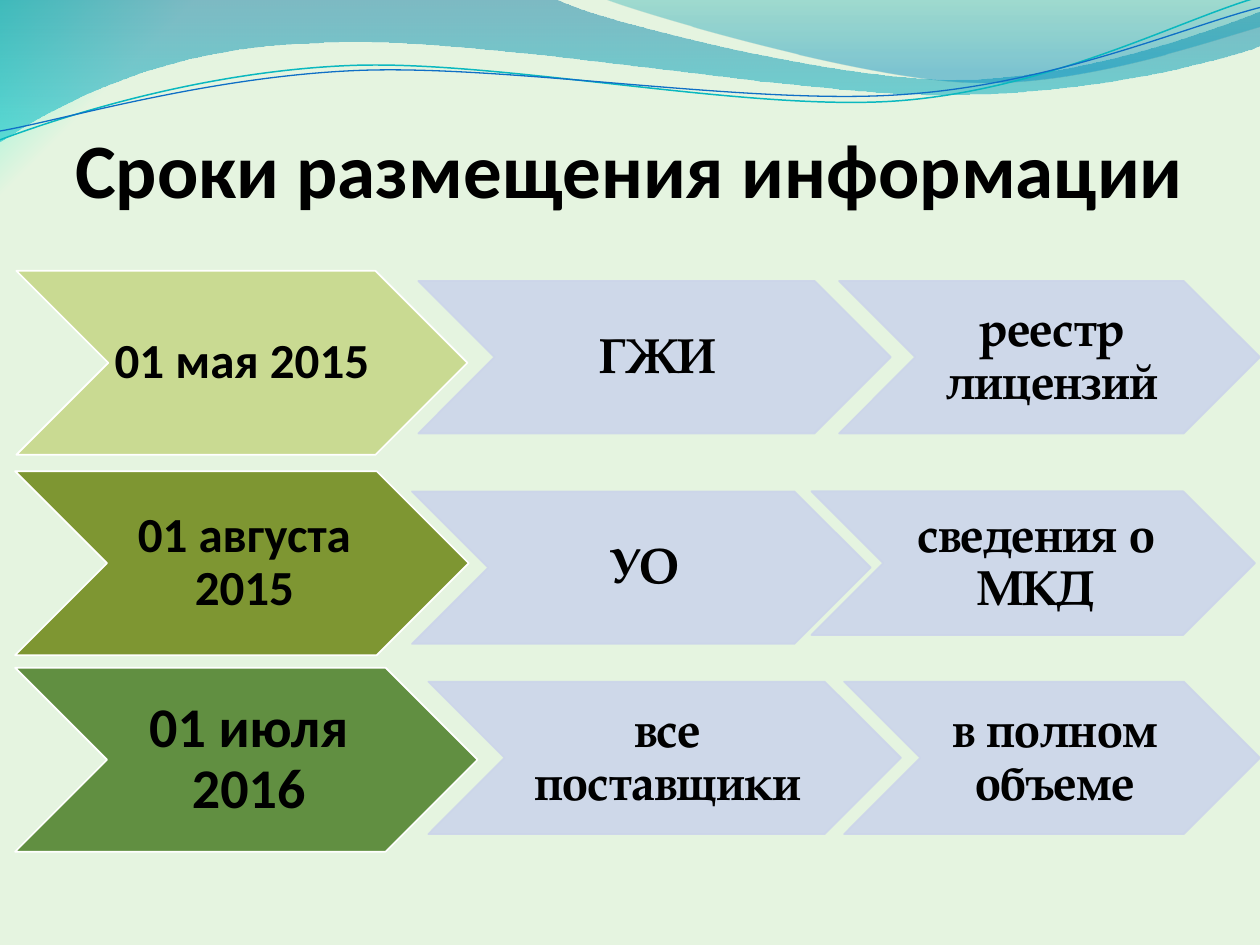
import math

from lxml import etree
from pptx import Presentation
from pptx import util as u
from pptx.dml.color import RGBColor
from pptx.enum import shapes, text
from pptx.oxml.ns import nsdecls, qn

THEME = {
    "black": "000000", "white": "FFFFFF", "step": "CCD5EA",
    "sans": "Calibri", "serif": "TeX Gyre Pagella",
    "title": 44, "date_large": 32, "body": 28,
}

# Gradient stops: position %, colour, opacity %
BACKGROUND = [(0, "E5F4E0", 100), (91, "E5F4E0", 100), (100, "74F4D1", 91)]
BLUE_TEAL = [(0, "0074A1", 45), (100, "00C6CF", 55)]
TEAL_BLUE = [(0, "00A1A9", 30), (80, "008BBF", 45)]

# Curves: a two-number step is a straight line, a six-number one a Bezier
WAVES = [
    (BLUE_TEAL, (0, 0), [
        (4.4, -0.01), (4.76, 0.17, 6.64, 0.63, 7.58, 0.63),
        (8.53, 0.63, 9.58, 0.26, 10, 0.09), (10.01, 0.36),
        (9.83, 0.44, 8.7, 0.76, 7.46, 0.75),
        (6.22, 0.75, 3.82, 0.28, 2.57, 0.34),
        (1.29, 0.36, 0.46, 0.83, -0.01, 1.13), (0, 0)]),
    (TEAL_BLUE, (4.79, -0.01), [
        (5.09, 0.11, 6.82, 0.62, 7.69, 0.65),
        (8.56, 0.69, 9.61, 0.32, 10, 0.21), (10, 0), (4.79, -0.01)]),
]
# Threads: colour, width, centre of turn, start, steps
TILT = -2.7
THREADS = [
    ("0AB8BF", 0.85, (4.99, 0.58), (0, 1.11), [
        (0.48, 0.93, 1.58, 0.57, 2.77, 0.52),
        (3.95, 0.47, 5.93, 0.89, 7.13, 0.8),
        (8.33, 0.71, 9.38, 0.15, 9.98, -0.02)]),
    ("0F6FC6", 0.75, (5, 0.59), (0, 1.04), [
        (0.47, 0.96, 1.64, 0.61, 2.83, 0.56),
        (4.03, 0.51, 5.97, 0.84, 7.17, 0.75),
        (8.36, 0.67, 9.41, 0.21, 10, 0.06)]),
]

TITLE = "Сроки размещения информации"
DATE_H = 1.46
INSET = 0.04
# Date: (text, colour, size, inset, left, top, width); steps: (text, left, width, height)
ROWS = [
    (("01 мая 2015", "C9DA92", "body", 0, 0.13, 2.15, 3.58), 2.23,
     [("ГЖИ", 3.32, 3.75, 1.21), ("реестр лицензий", 6.66, 3.34, 1.21)]),
    (("01 августа 2015", "7E9632", "body", INSET, 0.12, 3.74, 3.6), 3.9,
     [("УО", 3.27, 3.64, 1.21), ("сведения о МКД", 6.44, 3.52, 1.14)]),
    (("01 июля 2016", "618F41", "date_large", INSET, 0.12, 5.3, 3.67), 5.41,
     [("все поставщики", 3.4, 3.75, 1.21), ("в полном объеме", 6.7, 3.3, 1.21)]),
]


def rgb(value):
    return RGBColor.from_string(value)


def set_gradient(fill, root, stops, shade):
    fill.gradient()
    old = next(root.iter(qn("a:gradFill")))
    gs = "".join(
        f'<a:gs pos="{pos * 1000}"><a:srgbClr val="{color}">'
        f'<a:alpha val="{alpha * 1000}"/></a:srgbClr></a:gs>'
        for pos, color, alpha in stops)
    new = etree.fromstring(
        f'<a:gradFill {nsdecls("a")} rotWithShape="1"><a:gsLst>{gs}</a:gsLst>{shade}</a:gradFill>')
    old.getparent().replace(old, new)


def set_opacity(sp, percent):
    for color in sp._element.spPr.iter(qn("a:srgbClr")):
        etree.SubElement(color, qn("a:alpha")).set("val", str(percent * 1000))


def turn(point, centre, degrees):
    a = math.radians(degrees)
    x, y = point[0] - centre[0], point[1] - centre[1]
    return (centre[0] + x * math.cos(a) - y * math.sin(a),
            centre[1] + x * math.sin(a) + y * math.cos(a))


def add_curve(s, start, steps, close, centre=(0, 0), tilt=0):
    points = [start] + [step[i:i + 2] for step in steps for i in range(0, len(step), 2)]
    points = [tuple(map(u.Inches, turn(pt, centre, -tilt))) for pt in points]
    fb = s.shapes.build_freeform(*points[0])
    fb.add_line_segments(points[1:], close=close)
    sp = fb.convert_to_shape()
    sp.rotation = tilt
    sp.shadow.inherit = False
    # Join each three points of a Bezier step into one segment
    lines = iter(list(sp._element.iter(qn("a:lnTo"))))
    for step in steps:
        first, *rest = [next(lines) for _ in range(len(step) // 2)]
        if rest:
            bezier = etree.Element(qn("a:cubicBezTo"))
            first.addprevious(bezier)
            for line in (first, *rest):
                bezier.append(line[0])
                line.getparent().remove(line)
    return sp


def write(sp, words, font, size, anchor, insets):
    tf = sp.text_frame
    tf.word_wrap = True
    tf.vertical_anchor = anchor
    tf.margin_left, tf.margin_top, tf.margin_right, tf.margin_bottom = map(u.Inches, insets)
    tf.text = words
    p = tf.paragraphs[0]
    p.alignment = text.PP_ALIGN.CENTER
    r = p.runs[0]
    r.font.name, r.font.size, r.font.bold = font, u.Pt(THEME[size]), True
    r.font.color.rgb = rgb(THEME["black"])
    return p


def add_chevron(s, words, box, fill, line, font, size, inset=INSET):
    sp = s.shapes.add_shape(shapes.MSO_SHAPE.CHEVRON, *map(u.Inches, box))
    sp.shadow.inherit = False
    sp.fill.solid()
    sp.fill.fore_color.rgb = rgb(fill)
    sp.line.color.rgb = rgb(line)
    sp.line.width = u.Pt(1)
    p = write(sp, words, font, size, text.MSO_ANCHOR.MIDDLE, (inset, 0.02, 0, 0.02))
    p.line_spacing = 0.9
    return sp


def main():
    prs = Presentation()
    prs.slide_width, prs.slide_height = u.Inches(10), u.Inches(7.5)
    s = prs.slides.add_slide(prs.slide_layouts[6])

    # Background glow in the top left corner
    set_gradient(s.background.fill, s._element, BACKGROUND,
                 '<a:path path="circle"><a:fillToRect l="100000" t="100000"/></a:path>')

    # Waves and thin threads
    for stops, start, steps in WAVES:
        sp = add_curve(s, start, steps, True)
        set_gradient(sp.fill, sp._element, stops, '<a:lin ang="5400000" scaled="0"/>')
        sp.line.fill.background()
    for color, width, centre, start, steps in THREADS:
        sp = add_curve(s, start, steps, False, centre, TILT)
        sp.fill.background()
        sp.line.color.rgb = rgb(color)
        sp.line.width = u.Pt(width)

    # Title
    tb = s.shapes.add_textbox(*map(u.Inches, (0.5, 0.68, 9, 1.02)))
    write(tb, TITLE, THEME["sans"], "title", text.MSO_ANCHOR.BOTTOM, (0, 0.05, 0, 0))

    # Dates, each with who publishes and what
    for (date, color, size, inset, left, top, width), step_top, steps in ROWS:
        add_chevron(s, date, (left, top, width, DATE_H), color, THEME["white"],
                    THEME["sans"], size, inset)
        for words, x, w, h in steps:
            sp = add_chevron(s, words, (x, step_top, w, h), THEME["step"], THEME["step"],
                             THEME["serif"], "body")
            set_opacity(sp, 90)

    prs.save("out.pptx")


if __name__ == "__main__":
    main()
